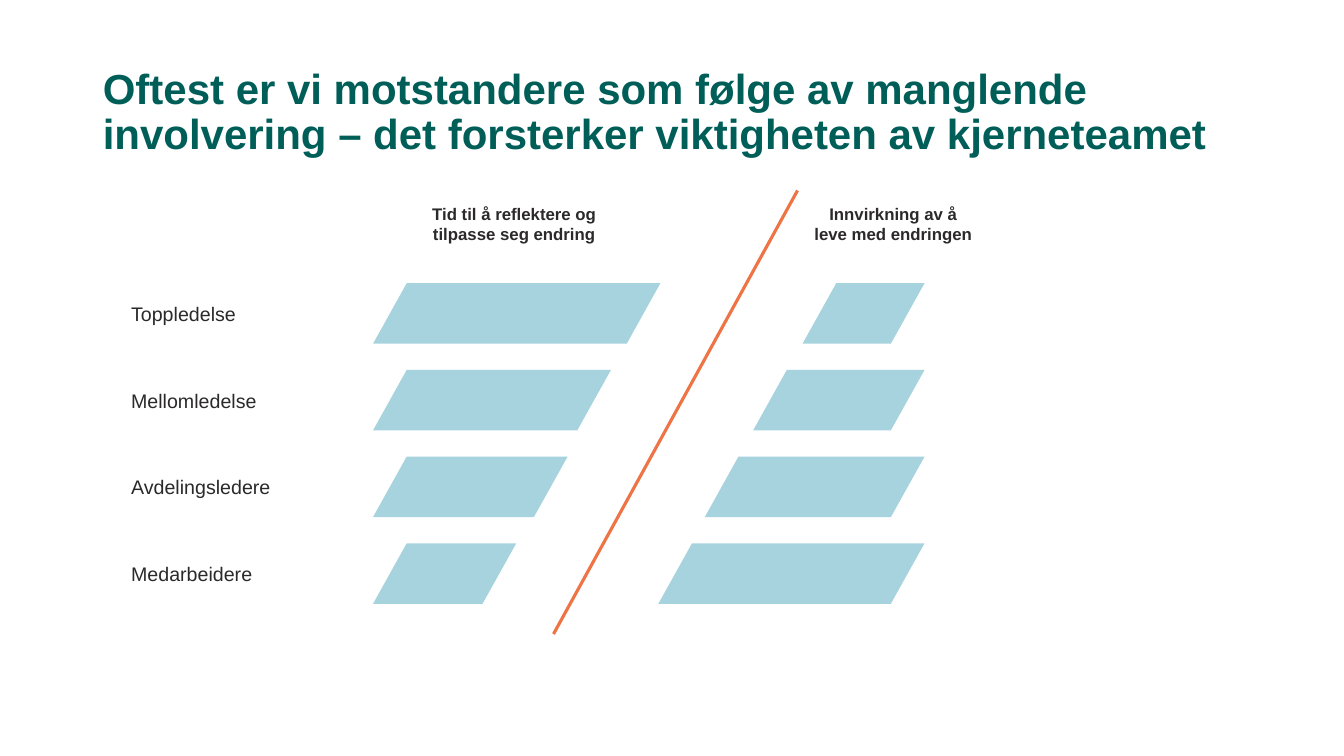
from dataclasses import dataclass

from lxml.etree import SubElement
from pptx import Presentation
from pptx.dml.color import RGBColor
from pptx.enum.shapes import MSO_CONNECTOR, MSO_SHAPE
from pptx.enum.text import MSO_ANCHOR, MSO_AUTO_SIZE, PP_ALIGN
from pptx.oxml.ns import qn
from pptx.util import Inches, Pt


@dataclass(frozen=True)
class Theme:
    font: str = "Arial"
    title_color: RGBColor = RGBColor(0x00, 0x5E, 0x58)
    text_color: RGBColor = RGBColor(0x2B, 0x29, 0x29)
    bar_color: RGBColor = RGBColor(0xA6, 0xD3, 0xDD)
    divider_color: RGBColor = RGBColor(0xEF, 0x74, 0x45)
    title_size: Pt = Pt(30)
    heading_size: Pt = Pt(12)
    label_size: Pt = Pt(14)
    divider_width: Pt = Pt(2.25)


THEME = Theme()
TITLE = (
    "Oftest er vi motstandere som følge av manglende involvering "
    "– det forsterker viktigheten av kjerneteamet"
)
HEADINGS = [
    ("Tid til å reflektere og tilpasse seg endring", 4.14, 1.92),
    ("Innvirkning av å leve med endringen", 7.99, 1.74),
]
LEVELS = [
    ("Toppledelse", 2.85, 1.21),
    ("Mellomledelse", 2.36, 1.7),
    ("Avdelingsledere", 1.93, 2.18),
    ("Medarbeidere", 1.42, 2.64),
]
FIRST_ROW_TOP = 2.81
ROW_STEP = 0.86
BAR_HEIGHT = 0.6
BAR_SLANT = 0.557
LABEL_HEIGHT = 0.31
REFLECTION_LEFT = 3.7
IMPACT_RIGHT = 9.17


def set_attributes(target, values):
    for name, value in values.items():
        setattr(target, name, value)


def write_text(frame, text, size, color, bold=False, align=PP_ALIGN.LEFT):
    frame.text = text
    para = frame.paragraphs[0]
    para.alignment = align
    span = para.runs[0]
    set_attributes(span.font, {"name": THEME.font, "size": size, "bold": bold})
    span.font.color.rgb = color
    return para


def place_title(page):
    title = page.shapes.title
    set_attributes(title, {
        "left": Inches(0.92), "top": Inches(0.66),
        "width": Inches(11.5), "height": Inches(0.93),
    })
    frame = title.text_frame
    set_attributes(frame, {
        "word_wrap": True,
        "auto_size": MSO_AUTO_SIZE.NONE,
        "vertical_anchor": MSO_ANCHOR.MIDDLE,
        "margin_top": Inches(0),
        "margin_bottom": Inches(0),
    })
    para = write_text(frame, TITLE, THEME.title_size, THEME.title_color, bold=True)
    para.line_spacing = 0.9


def add_text(page, text, left, top, width, height, size, anchor, **style):
    box = page.shapes.add_textbox(
        Inches(left), Inches(top), Inches(width), Inches(height)
    )
    set_attributes(box.text_frame, {
        "word_wrap": True,
        "auto_size": MSO_AUTO_SIZE.SHAPE_TO_FIT_TEXT,
        "vertical_anchor": anchor,
        "margin_left": Inches(0.07),
        "margin_right": Inches(0.07),
        "margin_top": Inches(0.04),
        "margin_bottom": Inches(0.04),
    })
    write_text(box.text_frame, text, size, THEME.text_color, **style)


def add_bar(page, left, top, width):
    bar = page.shapes.add_shape(
        MSO_SHAPE.PARALLELOGRAM,
        Inches(left), Inches(top), Inches(width), Inches(BAR_HEIGHT),
    )
    bar.adjustments[0] = BAR_SLANT
    bar.shadow.inherit = False
    bar.fill.solid()
    bar.fill.fore_color.rgb = THEME.bar_color
    bar.line.fill.background()


def add_divider(page):
    divider = page.shapes.add_connector(
        MSO_CONNECTOR.STRAIGHT,
        Inches(5.49), Inches(6.29), Inches(7.91), Inches(1.89),
    )
    divider.line.color.rgb = THEME.divider_color
    divider.line.width = THEME.divider_width
    SubElement(divider._element.spPr, qn("a:effectLst"))


def add_level(page, row, label, reflection_width, impact_width):
    top = FIRST_ROW_TOP + row * ROW_STEP
    add_bar(page, REFLECTION_LEFT, top, reflection_width)
    add_bar(page, IMPACT_RIGHT - impact_width, top, impact_width)
    label_top = top + (BAR_HEIGHT - LABEL_HEIGHT) / 2
    add_text(page, label, 1.23, label_top, 2.72, LABEL_HEIGHT,
             THEME.label_size, MSO_ANCHOR.MIDDLE)


def main():
    deck = Presentation()
    set_attributes(deck, {"slide_width": Inches(13.33), "slide_height": Inches(7.5)})
    page = deck.slides.add_slide(deck.slide_layouts.get_by_name("Title Only"))
    add_divider(page)
    place_title(page)
    for text, left, width in HEADINGS:
        add_text(page, text, left, 1.98, width, 0.48, THEME.heading_size,
                 MSO_ANCHOR.TOP, bold=True, align=PP_ALIGN.CENTER)
    for row, level in enumerate(LEVELS):
        add_level(page, row, *level)
    deck.save("out.pptx")


if __name__ == "__main__":
    main()
